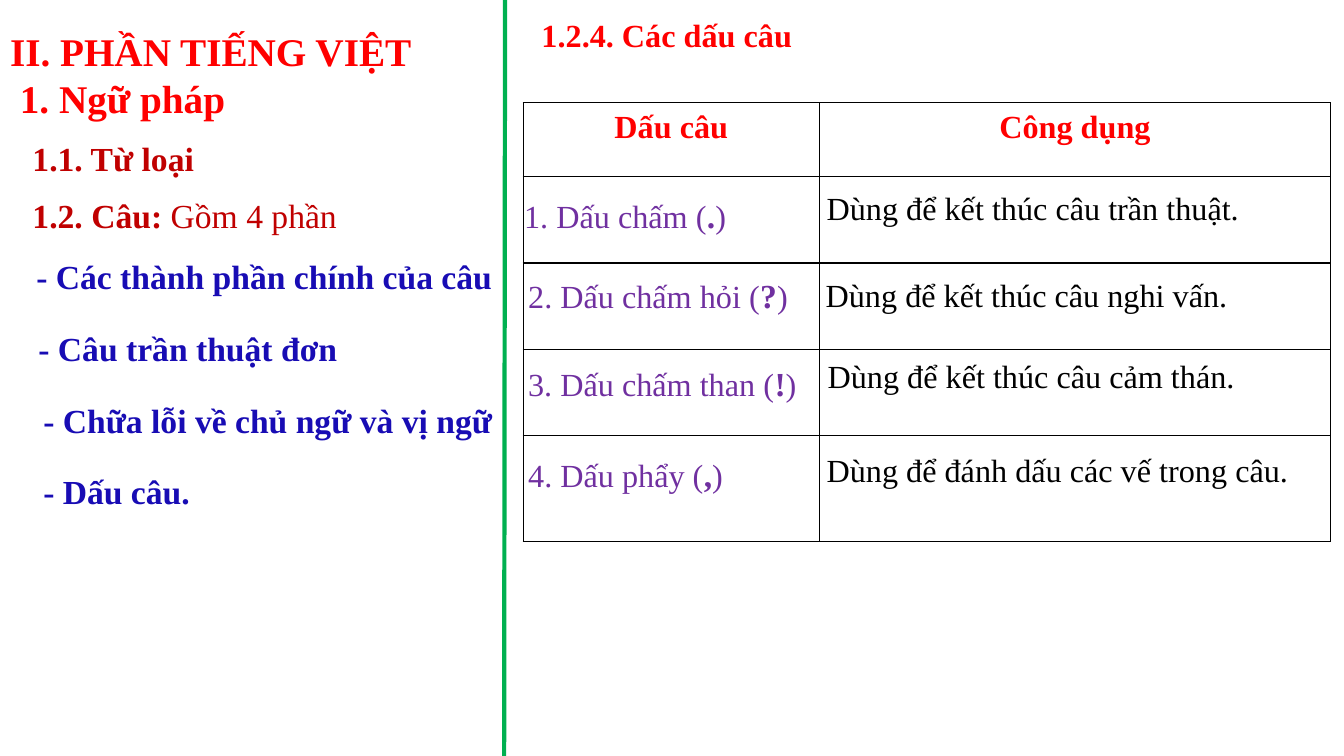
from dataclasses import dataclass

from lxml.etree import SubElement
from pptx import Presentation
from pptx.dml.color import RGBColor
from pptx.enum.shapes import MSO_CONNECTOR
from pptx.enum.text import MSO_ANCHOR, MSO_AUTO_SIZE, PP_ALIGN
from pptx.oxml.ns import qn
from pptx.util import Inches, Length, Pt

FONT = "Times New Roman"
RED, CRIMSON, BLUE = "FF0000", "C00000", "180CB4"
PURPLE, BLACK, GREEN = "7030A0", "000000", "00B050"
SLIDE_WIDTH, SLIDE_HEIGHT = Inches(13.33), Inches(7.5)


@dataclass(frozen=True)
class Area:
    """A rectangle in percent of the slide's width and height."""
    left: float
    top: float
    width: float
    height: float = 6.67


@dataclass(frozen=True)
class Span:
    """A stretch of text with one format."""
    text: str
    color: str
    size: float = 24
    bold: bool = True


@dataclass(frozen=True)
class Label:
    """A one-line text box."""
    area: Area
    spans: tuple[Span, ...]
    indent: float = 0
    wrap: bool = True
    align: PP_ALIGN = PP_ALIGN.LEFT


@dataclass(frozen=True)
class Mark:
    """A punctuation mark, its use, and the areas of both texts."""
    name: str
    sign: str
    usage: str
    name_area: Area
    usage_area: Area
    usage_wrap: bool = False


HEADINGS = [
    Label(Area(1.05, 17.6, 14.25), (Span("1.1. Từ loại", CRIMSON),), indent=6, wrap=False),
    Label(Area(1.05, 25.07, 29.33),
          (Span("1.2. Câu: ", CRIMSON), Span("Gồm 4 phần", CRIMSON, bold=False)), indent=6),
    Label(Area(39.46, 1.33, 20.33, 6.53), (Span("1.2.4. Các dấu câu", RED, 23),),
          wrap=False, align=PP_ALIGN.CENTER),
]
TITLE_LINES = [("II. PHẦN TIẾNG VIỆT", 0), ("1. Ngữ pháp", 7)]
TOPICS = [
    ("- Các thành phần chính của câu", 0),
    ("- Câu trần thuật đơn", 1.5),
    ("- Chữa lỗi về chủ ngữ và vị ngữ", 5),
    ("- Dấu câu.", 5),
]
MARKS = [
    Mark("1. Dấu chấm", ".", "Dùng để kết thúc câu trần thuật.",
         Area(38.26, 25.07, 17.7), Area(60.76, 24.27, 35.41, 6.53), True),
    Mark("2. Dấu chấm hỏi", "?", "Dùng để kết thúc câu nghi vấn.",
         Area(38.56, 35.73, 21.08), Area(60.69, 35.73, 31.73, 6.53)),
    Mark("3. Dấu chấm than", "!", "Dùng để kết thúc câu cảm thán.",
         Area(38.56, 47.33, 22.05), Area(60.84, 46.53, 32.11, 6.53)),
    Mark("4. Dấu phẩy", ",", "Dùng để đánh dấu các vế trong câu.",
         Area(38.56, 59.33, 20.63), Area(60.76, 58.93, 36.23, 6.53)),
]
TABLE_AREA = Area(38.93, 13.6, 60.08, 58)
TABLE_HEADER = ["Dấu câu", "Công dụng"]
COLUMN_SHARES = [22.05, 38.03]
ROW_SHARES = [9.73, 11.47, 11.47, 11.33, 14]


def across(share: float) -> Length:
    """Turn a percentage of the slide's width into a length."""
    return Length(round(SLIDE_WIDTH * share / 100))


def down(share: float) -> Length:
    """Turn a percentage of the slide's height into a length."""
    return Length(round(SLIDE_HEIGHT * share / 100))


def bounds(area: Area) -> tuple[Length, Length, Length, Length]:
    """Give the left, top, width and height of an area."""
    return across(area.left), down(area.top), across(area.width), down(area.height)


def hex_color(value: str) -> RGBColor:
    """Turn a hex string into a colour."""
    return RGBColor.from_string(value)


def write(para, text: str, *, size: float, color: str, bold: bool = True) -> None:
    """Append formatted text to a paragraph."""
    run = para.add_run()
    run.text = text
    run.font.name = FONT
    run.font.size = Pt(size)
    run.font.bold = bold
    run.font.color.rgb = hex_color(color)


def set_indent(para, points: float) -> None:
    """Set the left indent of a paragraph and take its bullet away."""
    properties = para._p.get_or_add_pPr()
    properties.set("marL", str(Pt(points)))
    properties.set("indent", "0")
    SubElement(properties, qn("a:buNone"))


def fill_placeholder(shape, area: Area, lines: list[tuple[str, float]], *,
                     size: float, color: str, gap: float = 0) -> None:
    """Move a placeholder and write its indented lines."""
    shape.left, shape.top, shape.width, shape.height = bounds(area)
    frame = shape.text_frame
    frame.word_wrap = True
    frame.auto_size = MSO_AUTO_SIZE.NONE
    frame.vertical_anchor = MSO_ANCHOR.TOP
    for index, (text, indent) in enumerate(lines):
        para = frame.add_paragraph() if index else frame.paragraphs[0]
        para.alignment = PP_ALIGN.LEFT
        para.space_before = Pt(gap if index else 0)
        set_indent(para, indent)
        write(para, text, size=size, color=color)


def add_label(page, label: Label) -> None:
    """Draw a one-line text box."""
    box = page.shapes.add_textbox(*bounds(label.area))
    frame = box.text_frame
    frame.word_wrap = label.wrap
    frame.auto_size = MSO_AUTO_SIZE.SHAPE_TO_FIT_TEXT
    para = frame.paragraphs[0]
    para.alignment = label.align
    set_indent(para, label.indent)
    for span in label.spans:
        write(para, span.text, size=span.size, color=span.color, bold=span.bold)


def add_mark(page, mark: Mark) -> None:
    """Draw the name and the use of a punctuation mark."""
    name = (Span(f"{mark.name} (", PURPLE, 23, False), Span(mark.sign, PURPLE),
            Span(")", PURPLE, 23, False))
    add_label(page, Label(mark.name_area, name))
    add_label(page, Label(mark.usage_area, (Span(mark.usage, BLACK, 23, False),),
                          wrap=mark.usage_wrap, align=PP_ALIGN.JUSTIFY))


def outline_cell(cell) -> None:
    """Give a cell thin black borders and no fill."""
    properties = cell._tc.get_or_add_tcPr()
    for side in ("a:lnL", "a:lnR", "a:lnT", "a:lnB"):
        border = SubElement(properties, qn(side), w=str(Pt(1)))
        SubElement(SubElement(border, qn("a:solidFill")), qn("a:srgbClr"), val=BLACK)
    cell.fill.background()


def add_mark_table(page) -> None:
    """Draw the table grid with its header."""
    table = page.shapes.add_table(len(ROW_SHARES), len(COLUMN_SHARES), *bounds(TABLE_AREA)).table
    table.first_row = table.horz_banding = False
    for column, share in zip(table.columns, COLUMN_SHARES):
        column.width = across(share)
    for row, share in zip(table.rows, ROW_SHARES):
        row.height = down(share)
    for cell in table.iter_cells():
        cell.margin_left = cell.margin_right = across(1)
        cell.margin_top = cell.margin_bottom = down(0.9)
        outline_cell(cell)
    for index, text in enumerate(TABLE_HEADER):
        para = table.cell(0, index).text_frame.paragraphs[0]
        para.alignment = PP_ALIGN.CENTER
        write(para, text, size=23, color=RED)


def add_divider(page) -> None:
    """Draw the green line between the two halves."""
    divider = page.shapes.add_connector(
        MSO_CONNECTOR.STRAIGHT, across(37.58), 0, across(37.51), SLIDE_HEIGHT)
    divider.line.color.rgb = hex_color(GREEN)
    divider.line.width = Pt(3)
    SubElement(divider._element.spPr, qn("a:effectLst"))


def main() -> None:
    """Build the slide and save it."""
    deck = Presentation()
    deck.slide_width, deck.slide_height = SLIDE_WIDTH, SLIDE_HEIGHT
    page = deck.slides.add_slide(deck.slide_layouts[1])
    fill_placeholder(page.shapes.title, Area(0, 2.93, 34.13, 14.67), TITLE_LINES,
                     size=28, color=RED)
    fill_placeholder(page.placeholders[1], Area(1.95, 33.2, 36.98, 34.4), TOPICS,
                     size=24, color=BLUE, gap=22.4)
    add_divider(page)
    add_mark_table(page)
    for label in HEADINGS:
        add_label(page, label)
    for mark in MARKS:
        add_mark(page, mark)
    deck.save("out.pptx")


if __name__ == "__main__":
    main()
